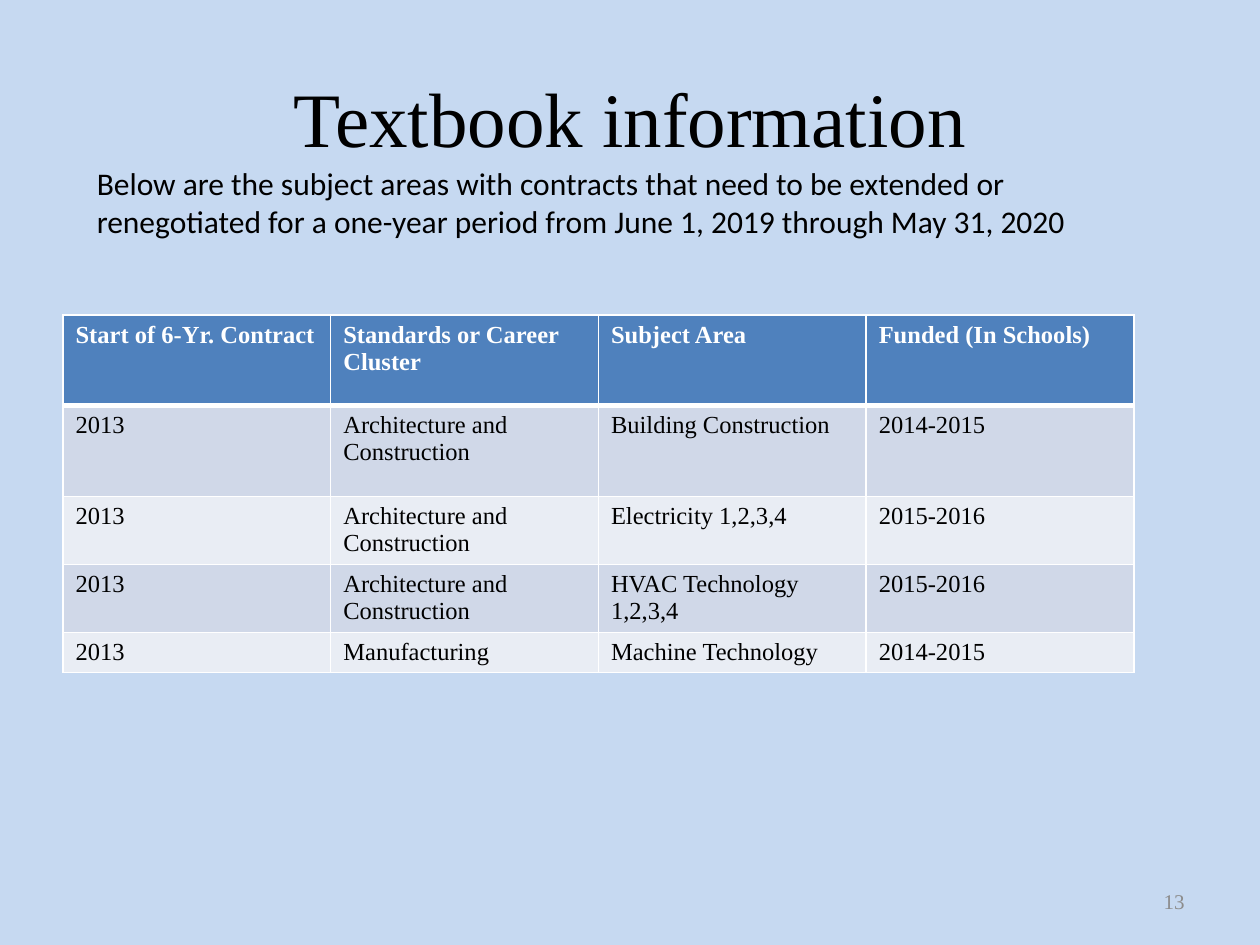
"""Build the textbook contract slide with its table of subject areas."""
import pptx
import pptx.util
import pptx.dml.color
import pptx.enum.text
import pptx.oxml

Inches = pptx.util.Inches
Pt = pptx.util.Pt
Rgb = pptx.dml.color.RGBColor.from_string
Align = pptx.enum.text.PP_ALIGN
Anchor = pptx.enum.text.MSO_ANCHOR

TITLE = "Textbook information"
INTRO = ("Below are the subject areas with contracts that need to be extended or "
         "renegotiated for a one-year period from June 1, 2019 through May 31, 2020")
PAGE = "13"
ROWS = [
    ("Start of 6-Yr. Contract", "Standards or Career Cluster", "Subject Area", "Funded (In Schools)"),
    ("2013", "Architecture and Construction", "Building Construction", "2014-2015"),
    ("2013", "Architecture and Construction", "Electricity 1,2,3,4", "2015-2016"),
    ("2013", "Architecture and Construction", "HVAC Technology 1,2,3,4", "2015-2016"),
    ("2013", "Manufacturing", "Machine Technology", "2014-2015"),
]
HEIGHTS = [0.72, 0.72, 0.54, 0.54, 0.32]

SERIF = "Times New Roman"
THEME = {
    "back": "C6D9F1",
    "head": "4F81BD",
    "bands": ("D0D8E8", "E9EDF4"),
    "rule": "FFFFFF",
    "title": {"name": SERIF, "size": 44, "color": "000000"},
    "intro": {"name": "Calibri", "size": 18, "color": "000000"},
    "page": {"name": SERIF, "size": 12, "color": "8C8C8C"},
    "label": {"name": SERIF, "size": 14, "color": "FFFFFF", "bold": True},
    "cell": {"name": SERIF, "size": 14, "color": "000000", "bold": False},
}


def write(frame, text, style, align=Align.LEFT):
    para = frame.paragraphs[0]
    para.alignment = align
    run = para.add_run()
    run.text = text
    for key, value in THEME[style].items():
        if key == "color":
            run.font.color.rgb = Rgb(value)
        else:
            setattr(run.font, key, Pt(value) if key == "size" else value)


def place(shape, left, top, width, height):
    box = {"left": left, "top": top, "width": width, "height": height}
    for key, value in box.items():
        setattr(shape, key, Inches(value))


def add_text(slide, box, text, style, align=Align.LEFT, anchor=Anchor.TOP):
    frame = slide.shapes.add_textbox(*map(Inches, box)).text_frame
    frame.word_wrap = True
    frame.vertical_anchor = anchor
    write(frame, text, style, align)
    return frame


def rule_cell(cell, widths):
    props = cell._tc.get_or_add_tcPr()
    for side, width in widths.items():
        props.append(pptx.oxml.parse_xml(
            f'<a:ln{side} xmlns:a="http://schemas.openxmlformats.org/drawingml/2006/main" '
            f'w="{Pt(width)}"><a:solidFill><a:srgbClr val="{THEME["rule"]}"/>'
            f'</a:solidFill></a:ln{side}>'))


def add_grid(slide):
    count = len(ROWS[0])
    box = (0.5, 2.5, 8.5, sum(HEIGHTS))
    table = slide.shapes.add_table(len(ROWS), count, *map(Inches, box)).table
    for col in table.columns:
        col.width = Inches(box[2] / count)
    for r, (texts, height) in enumerate(zip(ROWS, HEIGHTS)):
        table.rows[r].height = Inches(height)
        fill = THEME["bands"][(r - 1) % 2] if r else THEME["head"]
        for c, text in enumerate(texts):
            cell = table.cell(r, c)
            rule_cell(cell, {"L": 1, "R": 1, "T": 3 if r == 1 else 1, "B": 1 if r else 3})
            cell.fill.solid()
            cell.fill.fore_color.rgb = Rgb(fill)
            write(cell.text_frame, text, "cell" if r else "label")


def main():
    deck = pptx.Presentation()
    deck.slide_width, deck.slide_height = Inches(10), Inches(7.5)
    slide = deck.slides.add_slide(deck.slide_layouts[5])
    slide.background.fill.solid()
    slide.background.fill.fore_color.rgb = Rgb(THEME["back"])

    add_grid(slide)
    add_text(slide, (7.17, 6.95, 2.33, 0.4), PAGE, "page", Align.RIGHT, Anchor.MIDDLE)
    intro = add_text(slide, (0.67, 1.25, 8.67, 0.71), INTRO, "intro")
    intro.auto_size = pptx.enum.text.MSO_AUTO_SIZE.SHAPE_TO_FIT_TEXT

    title = slide.shapes.title
    place(title, 0.5, 0.3, 9, 1.25)
    title.text_frame.vertical_anchor = Anchor.MIDDLE
    write(title.text_frame, TITLE, "title", Align.CENTER)
    deck.save("out.pptx")


if __name__ == "__main__":
    main()
